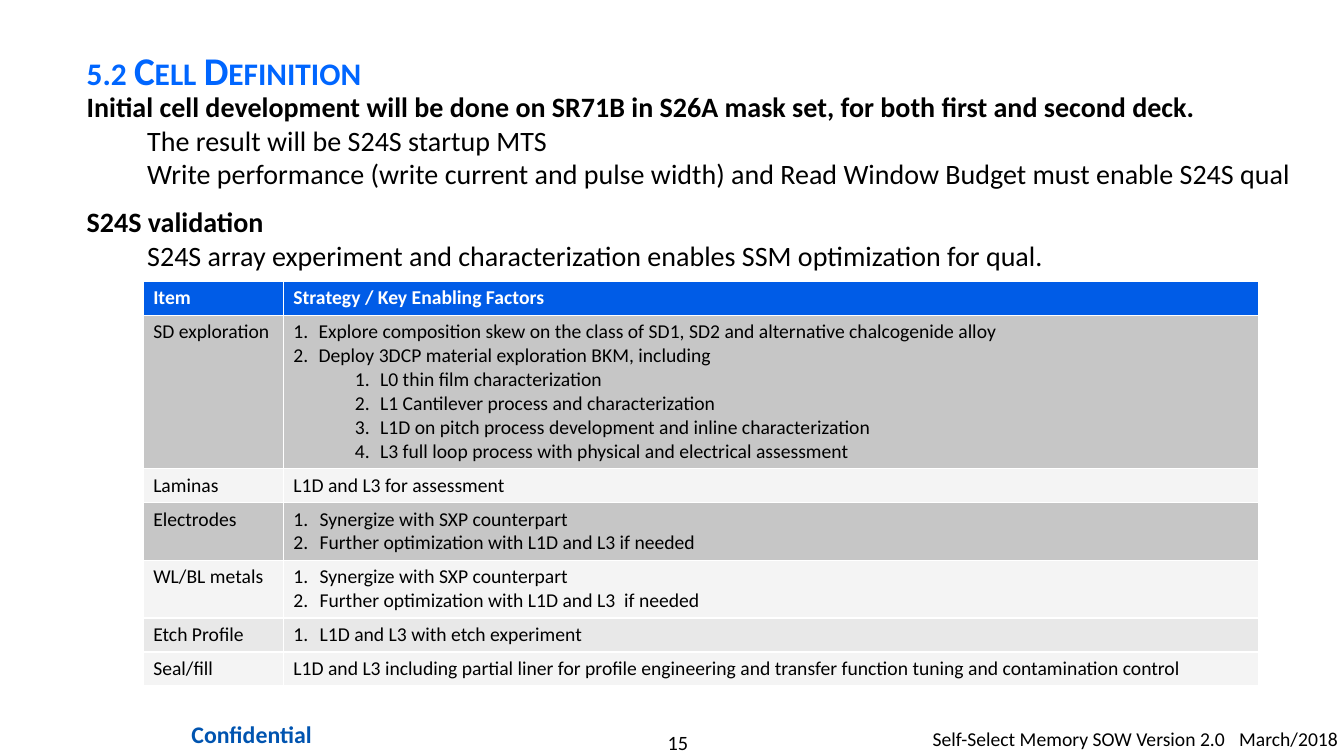
from dataclasses import dataclass

from pptx import Presentation
from pptx.dml.color import RGBColor
from pptx.enum.text import MSO_ANCHOR, MSO_AUTO_SIZE, PP_ALIGN
from pptx.oxml.xmlchemy import OxmlElement
from pptx.util import Inches, Pt

FONT = "Calibri"
BLACK = "000000"
WHITE = "FFFFFF"
TITLE_BLUE = "0066FF"
HEADER_BLUE = "005CE7"
FOOTER_BLUE = "0054B0"
DARK_GREY, MID_GREY, PALE_GREY = "C6C6C6", "E8E8E8", "F4F4F4"


@dataclass
class Line:
    text: str
    level: int = 0
    left: float = 0
    hanging: float = 0
    numbered: bool = False
    bold: bool = False
    before: float = 0


@dataclass
class Row:
    item: str
    factors: list[Line]
    fill: str
    color: str = BLACK
    bold: bool = False


@dataclass
class Footer:
    text: str
    box: tuple[float, float, float, float]
    margins: tuple[float, float]
    size: float
    color: str = BLACK
    bold: bool = False
    align: PP_ALIGN = PP_ALIGN.CENTER
    tab: float = 0


def numbered(*texts: str, indent: float = 0.26) -> list[Line]:
    return [Line(t, left=indent, hanging=indent, numbered=True) for t in texts]


def steps(*texts: str) -> list[Line]:
    return [Line(t, 1, 0.86, 0.25, True) for t in texts]


def detail(text: str) -> Line:
    return Line(text, 1, 1.21, 0.61)


BODY = [
    Line("Initial cell development will be done on SR71B in S26A mask set, "
         "for both first and second deck.", bold=True),
    detail("The result will be S24S startup MTS"),
    detail("Write performance (write current and pulse width) and Read Window "
           "Budget must enable S24S qual"),
    Line("S24S validation", bold=True, before=10),
    detail("S24S array experiment and characterization enables SSM "
           "optimization for qual."),
]

ROWS = [
    Row("Item", [Line("Strategy / Key Enabling Factors")], HEADER_BLUE, WHITE, True),
    Row("SD exploration",
        numbered("Explore composition skew on the class of SD1, SD2 and "
                 "alternative chalcogenide alloy",
                 "Deploy 3DCP material exploration BKM, including", indent=0.25)
        + steps("L0 thin film characterization",
                "L1 Cantilever process and characterization",
                "L1D on pitch process development and inline characterization",
                "L3 full loop process with physical and electrical assessment"),
        DARK_GREY),
    Row("Laminas", [Line("L1D and L3 for assessment")], PALE_GREY),
    Row("Electrodes",
        numbered("Synergize with SXP counterpart",
                 "Further optimization with L1D and L3 if needed"), DARK_GREY),
    Row("WL/BL metals",
        numbered("Synergize with SXP counterpart",
                 "Further optimization with L1D and L3  if needed"), PALE_GREY),
    Row("Etch Profile", numbered("L1D and L3 with etch experiment"), MID_GREY),
    Row("Seal/fill",
        [Line("L1D and L3 including partial liner for profile engineering and "
              "transfer function tuning and contamination control")], PALE_GREY),
]

FOOTERS = [
    Footer("15", (5.56, 7.24, 2.33, 0.24), (0, 0), 14.5),
    Footer("Confidential", (1.55, 7.08, 1.89, 0.41), (0.12, 0.06), 17,
           FOOTER_BLUE, True),
    Footer("Self-Select Memory SOW Version 2.0\tMarch/2018",
           (9.25, 7.16, 4.08, 0.34), (0, 0.05), 14,
           align=PP_ALIGN.LEFT, tab=3.04),
]


def rgb(color: str) -> RGBColor:
    return RGBColor.from_string(color)


def place(shape, left: float, top: float, width: float, height: float) -> None:
    shape.left, shape.top = Inches(left), Inches(top)
    shape.width, shape.height = Inches(width), Inches(height)


def add_run(p, text: str, size: float, color: str, bold: bool):
    r = p.add_run()
    r.text = text
    r.font.name = FONT
    r.font.size = Pt(size)
    r.font.bold = bold
    r.font.color.rgb = rgb(color)
    return r


def add_lines(tf, lines: list[Line], size: float, color: str, bold: bool = False) -> None:
    for i, line in enumerate(lines):
        p = tf.add_paragraph() if i else tf.paragraphs[0]
        pPr = p._p.get_or_add_pPr()
        pPr.set("marL", str(Inches(line.left)))
        pPr.set("indent", str(-Inches(line.hanging)))
        bullet = OxmlElement("a:buAutoNum" if line.numbered else "a:buNone")
        if line.numbered:
            bullet.set("type", "arabicPeriod")
        pPr.append(bullet)
        p.level = line.level
        p.space_before = Pt(line.before)
        p.alignment = PP_ALIGN.LEFT
        add_run(p, line.text, size, color, bold or line.bold)


def add_footer(s, footer: Footer) -> None:
    tf = s.shapes.add_textbox(*map(Inches, footer.box)).text_frame
    tf.word_wrap = True
    tf.margin_left = tf.margin_right = Inches(footer.margins[0])
    tf.margin_top = tf.margin_bottom = Inches(footer.margins[1])
    p = tf.paragraphs[0]
    p.alignment = footer.align
    if footer.tab:
        tabs = OxmlElement("a:tabLst")
        tab = OxmlElement("a:tab")
        tab.set("pos", str(Inches(footer.tab)))
        tab.set("algn", "l")
        tabs.append(tab)
        p._p.get_or_add_pPr().append(tabs)
    add_run(p, footer.text, footer.size, footer.color, footer.bold)


def add_strategy_table(s) -> None:
    frame = s.shapes.add_table(len(ROWS), 2, Inches(1.42), Inches(2.79),
                               Inches(11.06), Inches(3.97))
    table = frame.table
    for column, width in zip(table.columns, (1.39, 9.67)):
        column.width = Inches(width)
    for i, row in enumerate(ROWS):
        table.rows[i].height = Inches(0.1 + 0.23 * len(row.factors))
        for j, lines in enumerate(([Line(row.item)], row.factors)):
            cell = table.cell(i, j)
            cell.fill.solid()
            cell.fill.fore_color.rgb = rgb(row.fill)
            add_lines(cell.text_frame, lines, 14, row.color, row.bold)


def main() -> None:
    """Build the cell definition slide."""
    prs = Presentation()
    prs.slide_width, prs.slide_height = Inches(13.33), Inches(7.5)
    s = prs.slides.add_slide(prs.slide_layouts[1])

    title, body = s.placeholders
    place(title, 0.76, 0.21, 11.06, 0.92)
    tf = title.text_frame
    tf.auto_size = MSO_AUTO_SIZE.NONE
    tf.vertical_anchor = MSO_ANCHOR.MIDDLE
    p = tf.paragraphs[0]
    p.alignment = PP_ALIGN.LEFT
    p.line_spacing = 1.1
    r = add_run(p, "5.2 Cell Definition", 28, TITLE_BLUE, True)
    r.font._element.set("cap", "small")

    place(body, 0.76, 0.84, 12.28, 1.96)
    body.text_frame.auto_size = MSO_AUTO_SIZE.NONE
    add_lines(body.text_frame, BODY, 20, BLACK)

    add_strategy_table(s)
    for footer in FOOTERS:
        add_footer(s, footer)
    prs.save("out.pptx")


if __name__ == "__main__":
    main()
